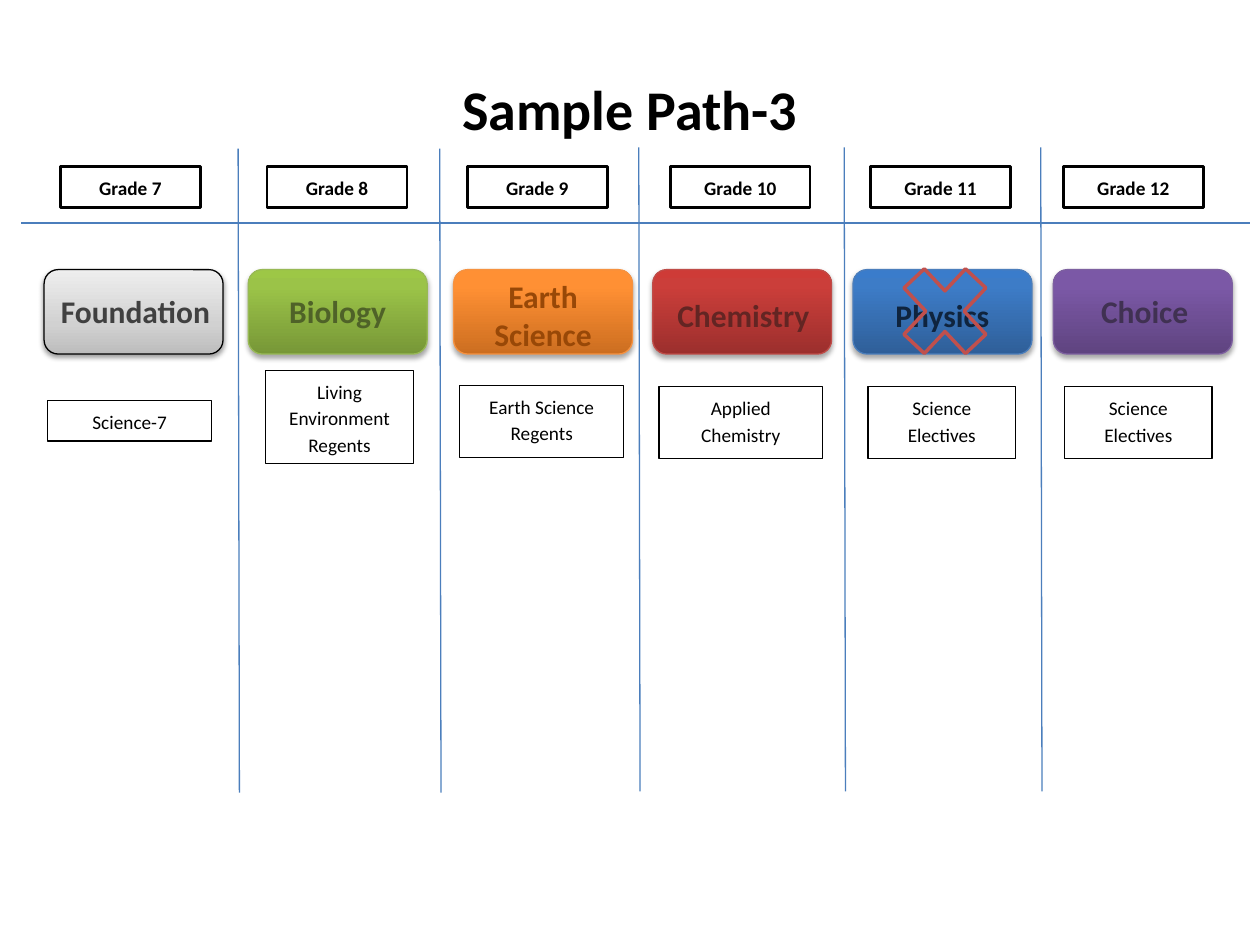
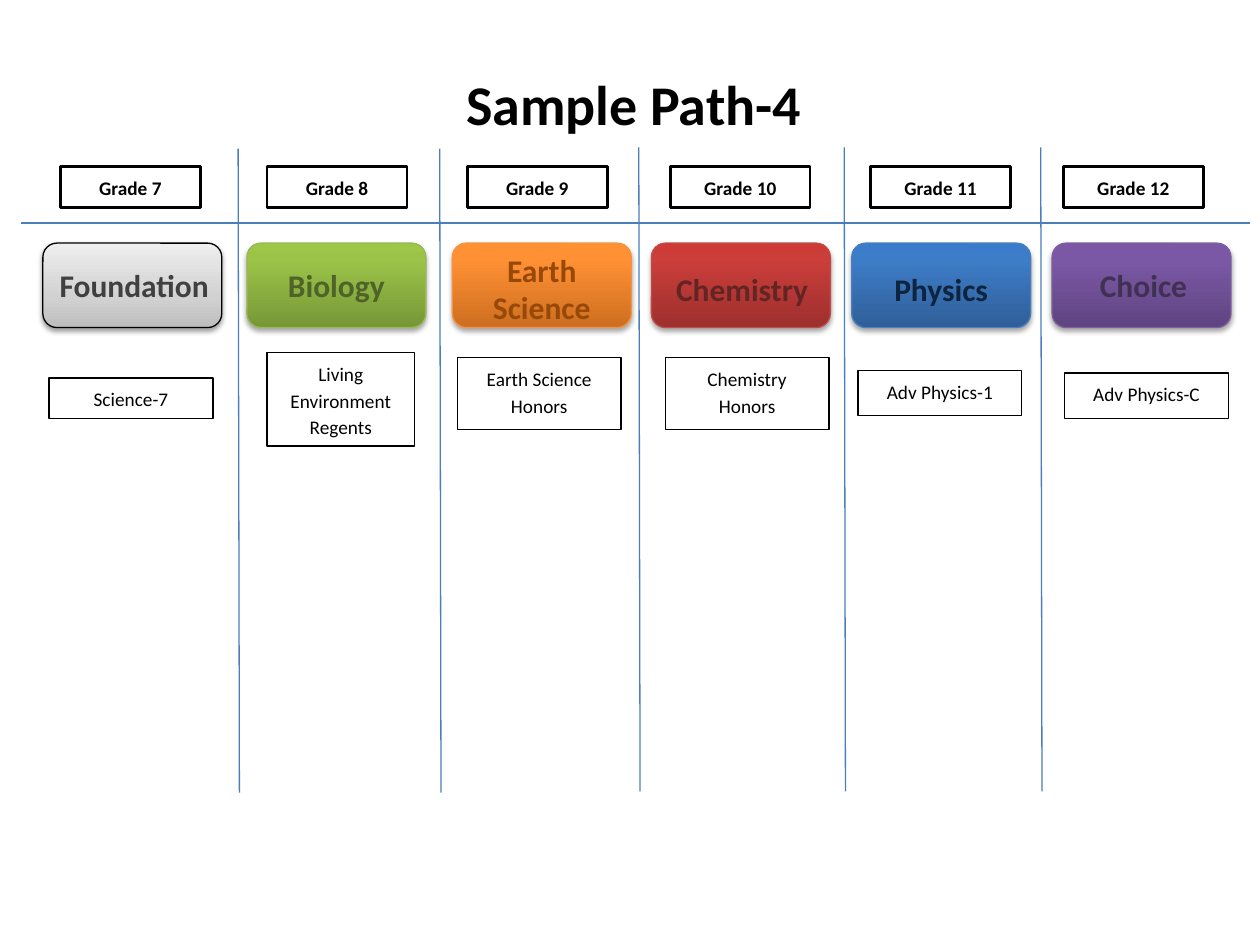
from copy import deepcopy

from lxml import etree
from pptx import Presentation
from pptx.dml.color import RGBColor
from pptx.enum.shapes import MSO_CONNECTOR, MSO_SHAPE
from pptx.enum.text import MSO_ANCHOR, PP_ALIGN
from pptx.oxml.ns import qn
from pptx.util import Inches, Pt

RECT = MSO_SHAPE.RECTANGLE
ROUNDED = MSO_SHAPE.ROUNDED_RECTANGLE
CROSS = MSO_SHAPE.MATH_MULTIPLY
STRAIGHT = MSO_CONNECTOR.STRAIGHT
TOP, MIDDLE = MSO_ANCHOR.TOP, MSO_ANCHOR.MIDDLE
CENTER, LEFT = PP_ALIGN.CENTER, PP_ALIGN.LEFT

FONT = "Calibri"
BLACK, WHITE, RULE_BLUE, CROSS_RED = "000000", "FFFFFF", "4B7EBC", "C0504D"

# Grade heading and its left edge
GRADES = [("Grade 7", 0.48), ("Grade 8", 2.12), ("Grade 9", 3.71),
          ("Grade 10", 5.32), ("Grade 11", 6.91), ("Grade 12", 8.44)]
GRADE_TOP, GRADE_SIZE = 1.32, (1.11, 0.33)

# Column dividers lean slightly to the right: top x, top y
DIVIDERS = [(1.89, 1.18), (3.49, 1.18), (5.07, 1.17), (6.7, 1.17), (8.26, 1.17)]
DIVIDER_LEAN, DIVIDER_HEIGHT = 0.01, 5.11
HEADING_RULE = (0.17, 1.77, 9.92, 1.77)

# Subject, pill left edge, label offset (x, y) and size, label colour,
# pill outline, gradient from bottom to top
SUBJECTS = [
    ("Foundation", 0.35, (0, 0.13, 1.45, 0.4), "404040", BLACK,
     [(0, "BDBDBD"), (0.35, "D1D1D1"), (1, "EEEEEE")]),
    ("Biology", 1.97, (0.21, 0.13, 1, 0.42), "4F6228", "98B955",
     [(0, "779737"), (0.8, "9BC348"), (1, "9DC746")]),
    ("Earth Science", 3.6, (0.17, 0.01, 1.08, 0.71), "984807", "F69240",
     [(0, "CC6E20"), (0.8, "FF9034"), (1, "FF9136")]),
    ("Chemistry", 5.18, (0.02, 0.16, 1.4, 0.4), "632523", "BF4C48",
     [(0, "9C2F2D"), (0.8, "CB3E3A"), (1, "CE3B37")]),
    ("Physics", 6.77, (0.21, 0.16, 1, 0.42), "0F243E", RULE_BLUE,
     [(0, "2F5F99"), (0.8, "3D7CC7"), (1, "3A7CCB")]),
    ("Choice", 8.36, (0, 0.13, 1.45, 0.4), "403152", "7D60A0",
     [(0, "5F4480"), (0.8, "7B58A6"), (1, "7C57A8")]),
]
PILL_SIZE = (1.42, 0.67)

PATHS = [
    {
        "title": "Sample Path-3",
        "title_box": (0.5, 0.17, 9, 1.38),
        "title_style": {"align": CENTER, "anchor": MIDDLE},
        "pills_top": 2.14,
        "pills_shift": 0,
        "courses": [
            ("Science-7", 0.38, 3.18, 1.3, 0.32),
            ("Living Environment Regents", 2.11, 2.94, 1.17, 0.74),
            ("Earth Science Regents", 3.65, 3.06, 1.3, 0.57),
            ("Applied Chemistry", 5.23, 3.07, 1.3, 0.57),
            ("Science Electives", 6.89, 3.07, 1.17, 0.57),
            ("Science Electives", 8.45, 3.07, 1.17, 0.57),
        ],
        "cross_out": (7.03, 1.97, 0.94, 1),
    },
    {
        "title": "Sample Path-4",
        "title_box": (3.6, 0.5, 2.89, 0.64),
        "title_style": {"align": LEFT, "wrap": False},
        "pills_top": 1.93,
        "pills_shift": -0.01,
        "courses": [
            ("Science-7", 0.39, 3, 1.3, 0.32),
            ("Living Environment Regents", 2.12, 2.8, 1.17, 0.74),
            ("Earth Science Honors", 3.63, 2.84, 1.3, 0.57),
            ("Chemistry Honors", 5.28, 2.84, 1.3, 0.57),
            ("Adv Physics-1", 6.81, 2.94, 1.3, 0.36),
            ("Adv Physics-C", 8.45, 2.96, 1.3, 0.36),
        ],
        "cross_out": None,
    },
]


def rgb(value):
    return RGBColor.from_string(value)


def inches(lengths):
    return [Inches(length) for length in lengths]


def write(shape, text, size, color=BLACK, bold=True, align=CENTER,
          anchor=TOP, wrap=True):
    frame = shape.text_frame
    frame.word_wrap = wrap
    frame.vertical_anchor = anchor
    paragraph = frame.paragraphs[0]
    paragraph.alignment = align
    run = paragraph.add_run()
    run.text = text
    font = run.font
    font.name, font.size, font.bold = FONT, Pt(size), bold
    font.color.rgb = rgb(color)
    return paragraph


def add_label(slide, text, box, size, **style):
    write(slide.shapes.add_textbox(*inches(box)), text, size, **style)


def add_outlined(slide, kind, box, line, width):
    shape = slide.shapes.add_shape(kind, *inches(box))
    shape.shadow.inherit = False
    shape.line.color.rgb = rgb(line)
    shape.line.width = Pt(width)
    return shape


def add_box(slide, text, box, line_width, bold):
    shape = add_outlined(slide, RECT, box, BLACK, line_width)
    shape.fill.solid()
    shape.fill.fore_color.rgb = rgb(WHITE)
    paragraph = write(shape, text, 11, bold=bold)
    paragraph.line_spacing = 1.15
    paragraph.space_after = Pt(10)


def add_rule(slide, ends):
    rule = slide.shapes.add_connector(STRAIGHT, *inches(ends))
    rule.line.color.rgb = rgb(RULE_BLUE)
    rule.line.width = Pt(0.75)
    etree.SubElement(rule._element.spPr, qn("a:effectLst"))


def fill_upward(shape, stops):
    """Gradient whose first stop lies at the bottom of the shape."""
    shape.fill.gradient()
    shape.fill.gradient_angle = 90
    stop_list = shape._element.spPr.find(".//" + qn("a:gsLst"))
    stop_list.append(deepcopy(stop_list[0]))
    for stop, (position, color) in zip(shape.fill.gradient_stops, stops):
        stop.position = position
        stop.color.rgb = rgb(color)


def drop_shadow(shape, opacity=35, distance=1.8):
    effects = shape._element.spPr.find(qn("a:effectLst"))
    shadow = etree.SubElement(effects, qn("a:outerShdw"), blurRad=str(Pt(3.1)),
                              dist=str(Pt(distance)), dir="5400000", rotWithShape="0")
    color = etree.SubElement(shadow, qn("a:srgbClr"), val=BLACK)
    etree.SubElement(color, qn("a:alpha"), val=str(opacity * 1000))


def add_grade_grid(slide):
    for x, y in DIVIDERS:
        add_rule(slide, (x, y, x + DIVIDER_LEAN, y + DIVIDER_HEIGHT))
    add_rule(slide, HEADING_RULE)
    for grade, left in GRADES:
        add_box(slide, grade, (left, GRADE_TOP, *GRADE_SIZE), 1.5, bold=True)


def add_subjects(slide, top, shift):
    for subject, left, (dx, dy, *size), color, outline, stops in SUBJECTS:
        left += shift
        pill = add_outlined(slide, ROUNDED, (left, top, *PILL_SIZE), outline, 0.75)
        fill_upward(pill, stops)
        if subject == "Foundation":
            drop_shadow(pill, opacity=38, distance=1.6)
        else:
            drop_shadow(pill)
        add_label(slide, subject, (left + dx, top + dy, *size), 18, color=color)


def add_path(deck, path):
    slide = deck.slides.add_slide(deck.slide_layouts[6])
    add_label(slide, path["title"], path["title_box"], 32, **path["title_style"])
    add_grade_grid(slide)
    for course, *box in path["courses"]:
        add_box(slide, course, box, 0.75, bold=False)
    add_subjects(slide, path["pills_top"], path["pills_shift"])
    if path["cross_out"]:
        cross = add_outlined(slide, CROSS, path["cross_out"], CROSS_RED, 2)
        cross.fill.background()


def main():
    deck = Presentation()
    deck.slide_width, deck.slide_height = Inches(10), Inches(7.5)
    for path in PATHS:
        add_path(deck, path)
    deck.save("out.pptx")


if __name__ == "__main__":
    main()
